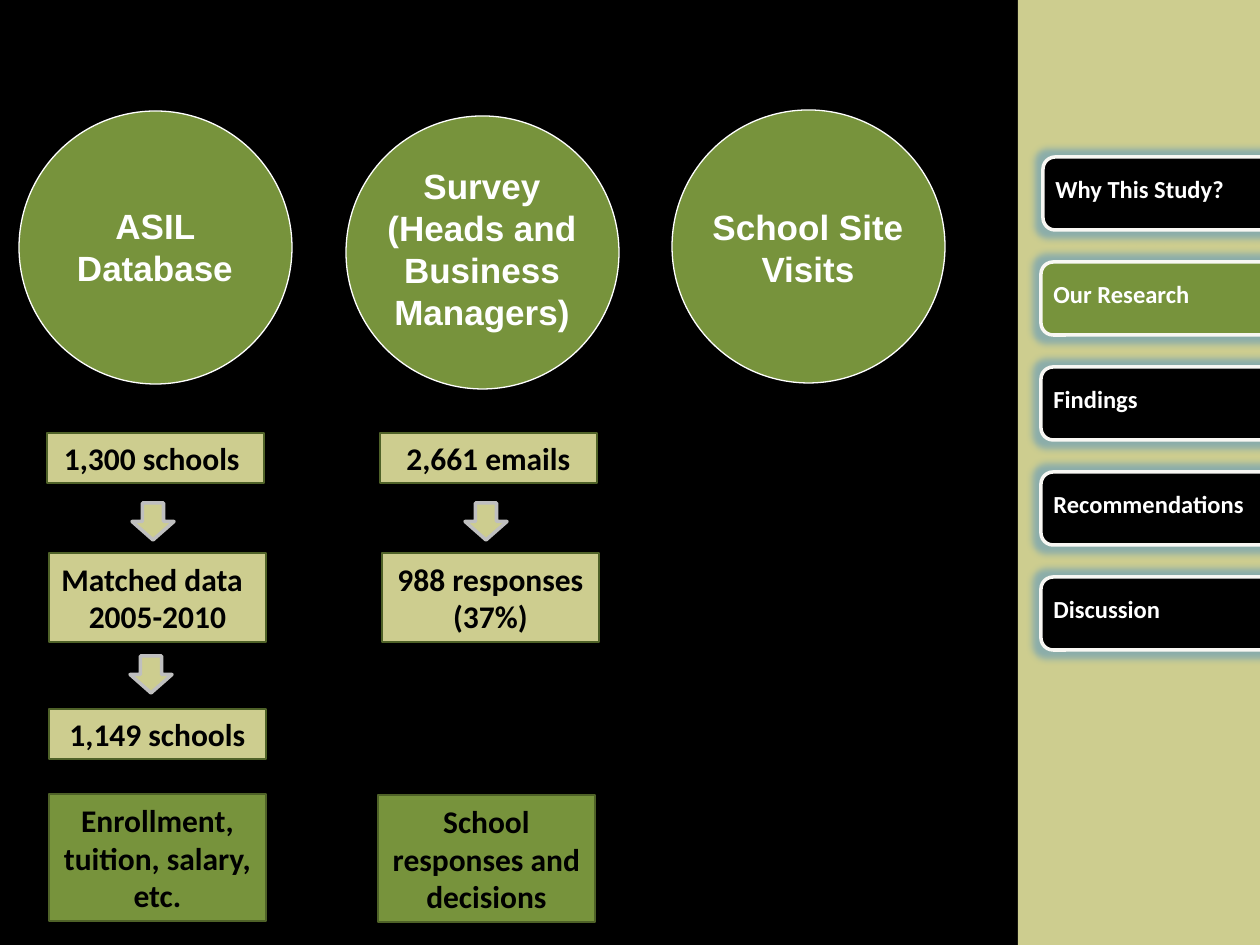
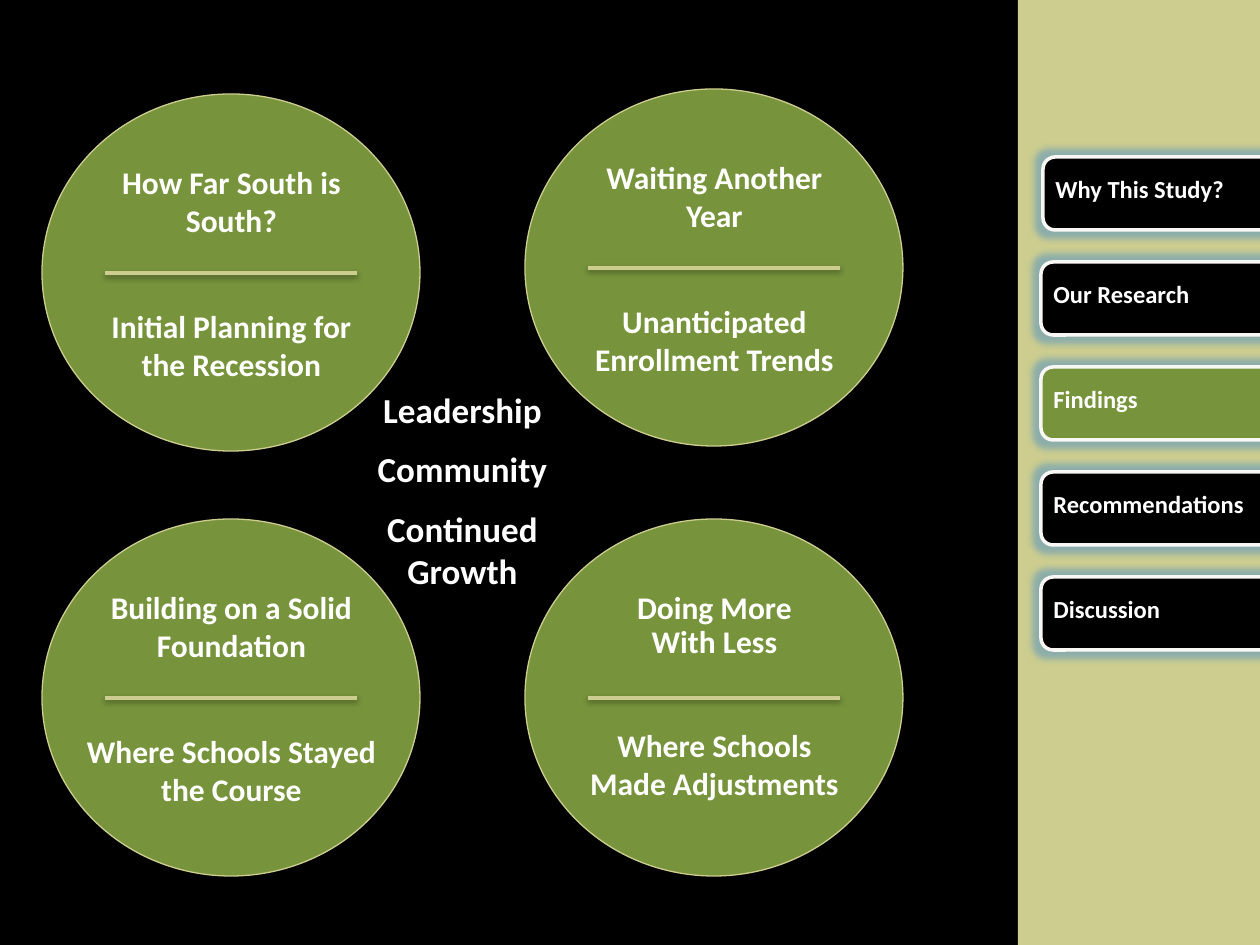
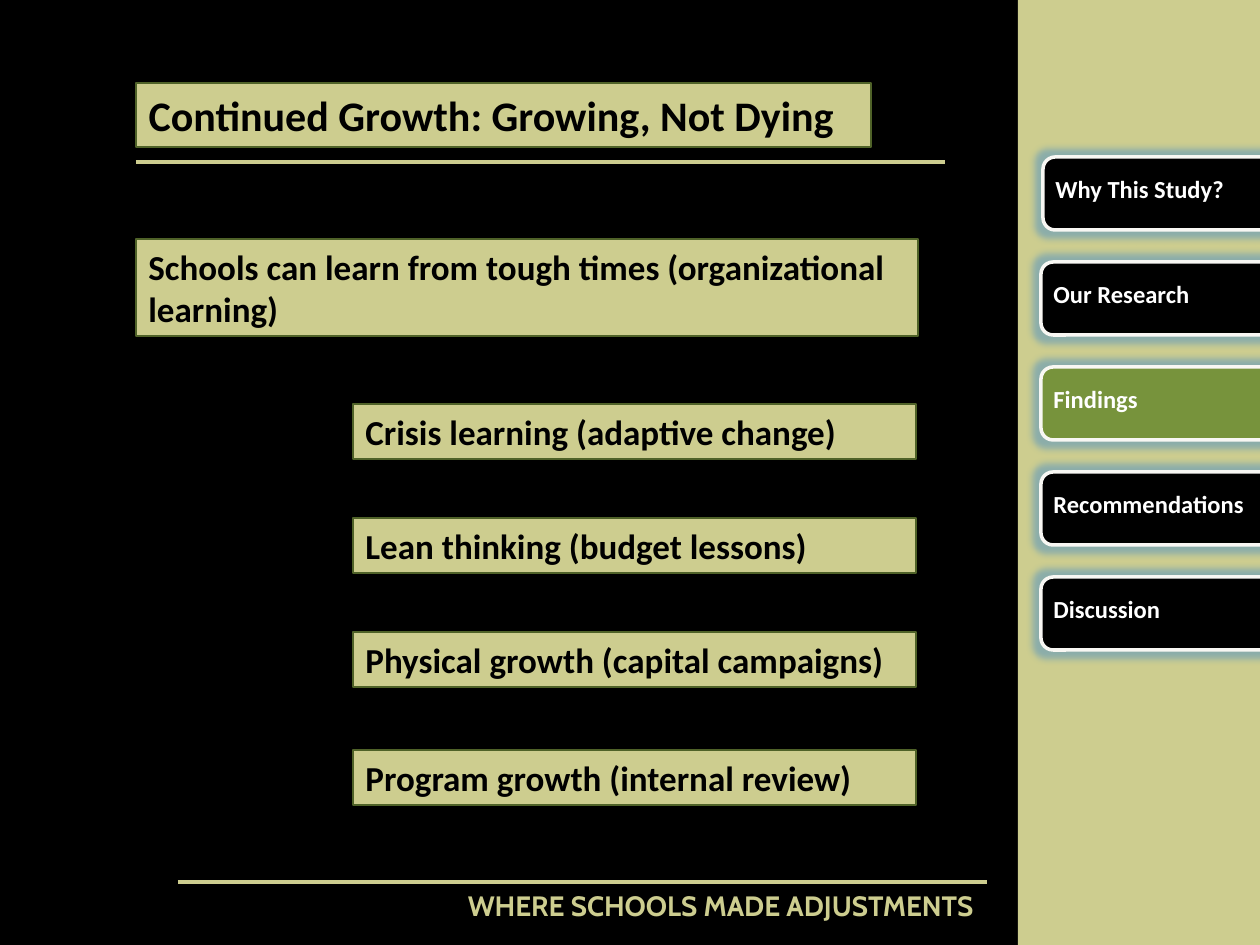
from dataclasses import dataclass

from lxml import etree
from pptx import Presentation
from pptx import util as u
from pptx.dml.color import RGBColor
from pptx.enum import shapes, text
from pptx.oxml.ns import qn

BLACK = RGBColor(0x00, 0x00, 0x00)
WHITE = RGBColor(0xFF, 0xFF, 0xFF)
GREEN = RGBColor(0x77, 0x93, 0x3C)
DARK_GREEN = RGBColor(0x4F, 0x62, 0x28)
SAND = RGBColor(0xCD, 0xCD, 0x8F)
SILVER = RGBColor(0xBF, 0xBF, 0xBF)
IVORY = RGBColor(0xF8, 0xF7, 0xF3)
GLOW = RGBColor(0x4B, 0x8F, 0xC6)

LEFT, CENTER, RIGHT = text.PP_ALIGN.LEFT, text.PP_ALIGN.CENTER, text.PP_ALIGN.RIGHT
KIND = shapes.MSO_SHAPE
PX_PER_INCH = 126
SECTIONS = ["Why This Study?", "Our Research", "Findings", "Recommendations", "Discussion"]


@dataclass
class Para:
    """One paragraph; a newline breaks the line, indent (px) moves its first line."""
    words: str
    align: int = CENTER
    before: int = 0
    spacing: float = 1.0
    indent: int = 0


def px(length):
    return u.Emu(round(length * 914400 / PX_PER_INCH))


def box_px(*lengths):
    return [px(length) for length in lengths]


def write(shape, paras, size, color, font="Calibri"):
    frame = shape.text_frame
    frame.word_wrap = True
    for number, para in enumerate(paras):
        line = frame.add_paragraph() if number else frame.paragraphs[0]
        line.alignment = para.align
        line.space_before = u.Pt(para.before)
        line.line_spacing = para.spacing
        if para.indent:
            props = line._p.get_or_add_pPr()
            props.set("marL", "0")
            props.set("indent", str(px(para.indent)))
        for part, words in enumerate(para.words.split("\n")):
            if part:
                line.add_line_break()
            run = line.add_run()
            run.text = words
            run.font.name, run.font.size, run.font.bold = font, u.Pt(size), True
            run.font.color.rgb = color


def paint(shape, fill, outline=None, weight=0.75):
    shape.fill.solid()
    shape.fill.fore_color.rgb = fill
    if outline is None:
        shape.line.fill.background()
    else:
        shape.line.color.rgb = outline
        shape.line.width = u.Pt(weight)


def add_figure(slide, kind, box, fill, outline=None, weight=0.75):
    figure = slide.shapes.add_shape(kind, *box_px(*box))
    figure.shadow.inherit = False
    paint(figure, fill, outline, weight)
    return figure


def add_label(slide, box, paras, size, color=WHITE, font="Calibri"):
    write(slide.shapes.add_textbox(*box_px(*box)), paras, size, color, font)


def add_panel(slide, box, paras, size=18, fill=SAND):
    panel = add_figure(slide, KIND.RECTANGLE, box, fill, DARK_GREEN)
    write(panel, paras, size, BLACK)


def add_effect(effects, kind, color, alpha, **sizes):
    effect = etree.SubElement(effects, qn("a:" + kind),
                              {name: str(value) for name, value in sizes.items()})
    tint = etree.SubElement(effect, qn("a:srgbClr"), val=str(color))
    etree.SubElement(tint, qn("a:alpha"), val=str(alpha * 1000))


def add_rule(slide, left, top, length):
    """Horizontal sand line with a soft shadow below it."""
    rule = slide.shapes.add_connector(shapes.MSO_CONNECTOR.STRAIGHT,
                                      *box_px(left, top, left + length, top))
    rule.line.color.rgb = SAND
    rule.line.width = u.Pt(2)
    effects = etree.SubElement(rule._element.spPr, qn("a:effectLst"))
    add_effect(effects, "outerShdw", BLACK, 38, blurRad=40000, dist=20000,
               dir=5400000, rotWithShape=0)


def add_sidebar(slide, current):
    add_figure(slide, KIND.RECTANGLE, (1018, 0, 242, 945), SAND)
    for number, section in enumerate(SECTIONS):
        left = 1041 if number else 1043
        top = 157 + 105 * number
        button = add_figure(slide, KIND.ROUNDED_RECTANGLE, (left, top, 242, 73),
                            GREEN if section == current else BLACK, IVORY, 2)
        add_effect(button._element.spPr.find(qn("a:effectLst")), "glow", GLOW, 50, rad=101600)
        add_label(slide, (left, top + 11, 220, 43), [Para(section, LEFT)], 14)


def add_source(slide, left, top, label_top, label_height, paras):
    add_figure(slide, KIND.OVAL, (left, top, 273, 273), GREEN, WHITE)
    add_label(slide, (left + 10, label_top, 252, label_height), paras, 20, font="Arial")


def add_finding(slide, left, top, paras, label_offset=63):
    add_figure(slide, KIND.OVAL, (left, top, 378, 357), GREEN, SAND)
    add_label(slide, (left + 32, top + label_offset, 315, 305 - label_offset), paras, 18)
    add_rule(slide, left + 63, top + 179, 252)


def build_research(slide):
    add_source(slide, 19, 111, 198, 97, [Para("ASIL Database")])
    add_source(slide, 346, 116, 158, 183,
               [Para("Survey"), Para("(Heads and Business Managers)")])
    add_source(slide, 672, 110, 199, 97, [Para("School Site Visits")])

    steps = [
        (47, 433, 50, SAND, [Para("1,300 schools ")]),
        (49, 553, 89, SAND, [Para("Matched data", LEFT), Para("2005-2010")]),
        (49, 709, 50, SAND, [Para("1,149 schools")]),
        (49, 794, 127, GREEN, [Para("Enrollment, tuition, salary, etc.")]),
        (380, 433, 50, SAND, [Para("2,661 emails")]),
        (382, 553, 89, SAND, [Para("988 responses (37%)")]),
        (378, 795, 127, GREEN, [Para("School responses and decisions")]),
    ]
    for left, top, height, fill, paras in steps:
        add_panel(slide, (left, top, 217, height), paras, fill=fill)
    for left, top in [(132, 503), (130, 656), (465, 503)]:
        add_figure(slide, KIND.DOWN_ARROW, (left, top, 42, 37), SAND, SILVER, 2)


def build_findings(slide):
    gap = 39
    add_finding(slide, 42, 94, [Para("How Far South is South?"),
                                Para("Initial Planning for the Recession", before=gap)])
    add_finding(slide, 525, 89, [Para("Waiting Another\nYear", indent=-14),
                                 Para("Unanticipated Enrollment Trends", before=gap)])
    add_finding(slide, 42, 519, [Para("Building on a Solid Foundation"),
                                 Para("Where Schools Stayed the Course", before=gap)])
    add_finding(slide, 525, 519, [Para("Doing More", before=9, spacing=0.5),
                                  Para("With Less", before=9, spacing=0.5),
                                  Para("Where Schools\nMade Adjustments", before=gap, indent=-20)],
                label_offset=79)
    add_label(slide, (305, 382, 315, 224),
              [Para("Leadership"), Para("Community", before=10),
               Para("Continued\nGrowth", before=10, indent=-62)], 20)


def build_growth(slide):
    add_rule(slide, 178, 882, 809)
    add_label(slide, (409, 882, 577, 46), [Para("WHERE SCHOOLS MADE ADJUSTMENTS", RIGHT)],
              16, SAND, "Cabin")

    title = slide.shapes.title
    title.left, title.top, title.width, title.height = box_px(136, 83, 735, 64)
    paint(title, SAND, DARK_GREEN)
    title.text_frame.auto_size = text.MSO_AUTO_SIZE.NONE
    write(title, [Para("Continued Growth: Growing, Not Dying", LEFT)], 24, BLACK)
    add_rule(slide, 136, 162, 809)

    add_panel(slide, (136, 239, 782, 97),
              [Para("Schools can learn from tough times (organizational learning)", LEFT)], 20)
    lessons = [
        (404, "Crisis learning (adaptive change)"),
        (518, "Lean thinking (budget lessons)"),
        (632, "Physical growth (capital campaigns)"),
        (750, "Program growth (internal review)"),
    ]
    for top, lesson in lessons:
        add_panel(slide, (353, top, 563, 55), [Para(lesson, LEFT)], 20)


def main():
    deck = Presentation()
    deck.slide_width, deck.slide_height = box_px(1260, 945)
    backdrop = deck.slide_master.background.fill
    backdrop.solid()
    backdrop.fore_color.rgb = BLACK

    title_only, blank = deck.slide_layouts[5], deck.slide_layouts[6]
    pages = [
        (blank, build_research, "Our Research"),
        (blank, build_findings, "Findings"),
        (title_only, build_growth, "Findings"),
    ]
    for layout, build, section in pages:
        slide = deck.slides.add_slide(layout)
        build(slide)
        add_sidebar(slide, section)
    deck.save("out.pptx")


if __name__ == "__main__":
    main()
